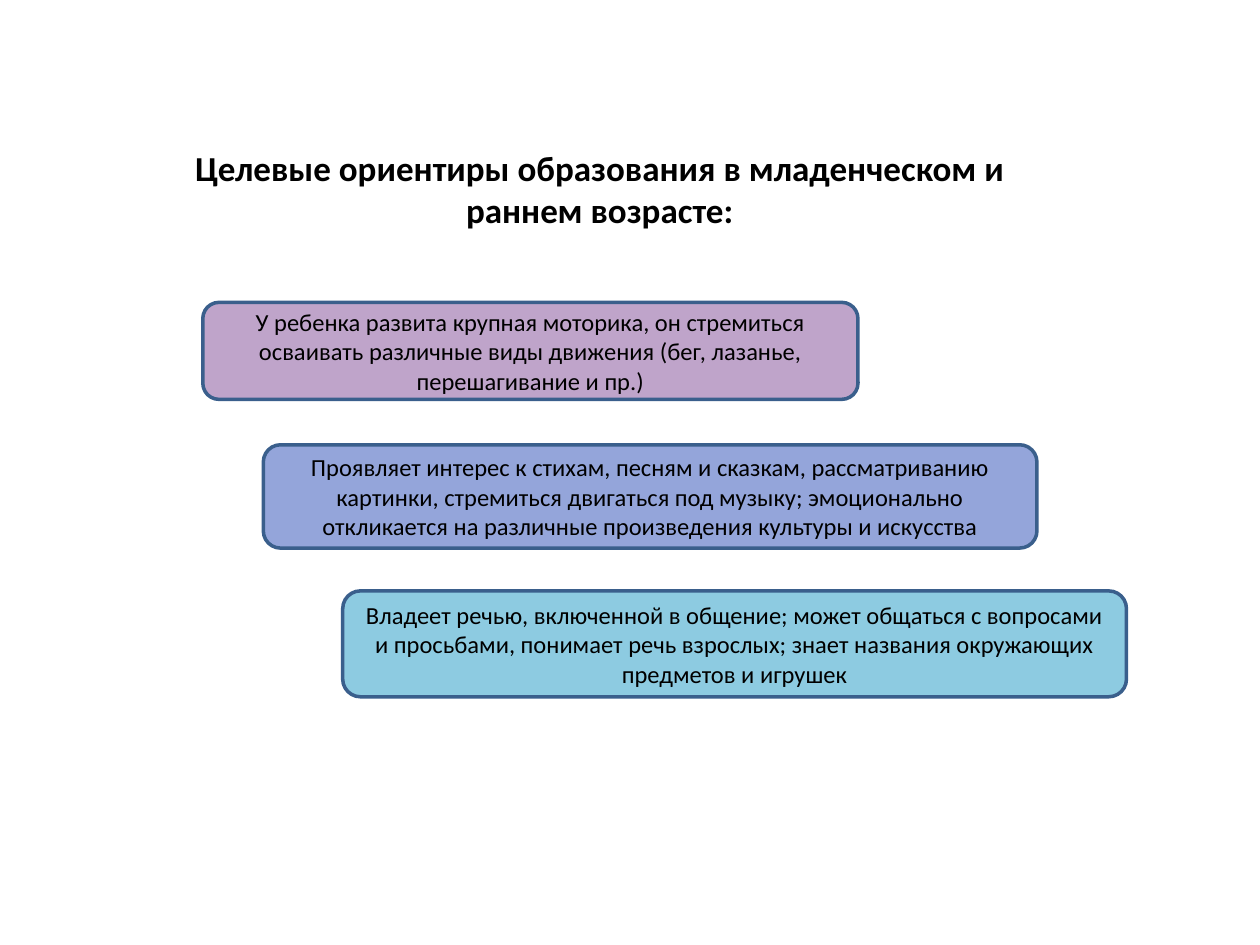
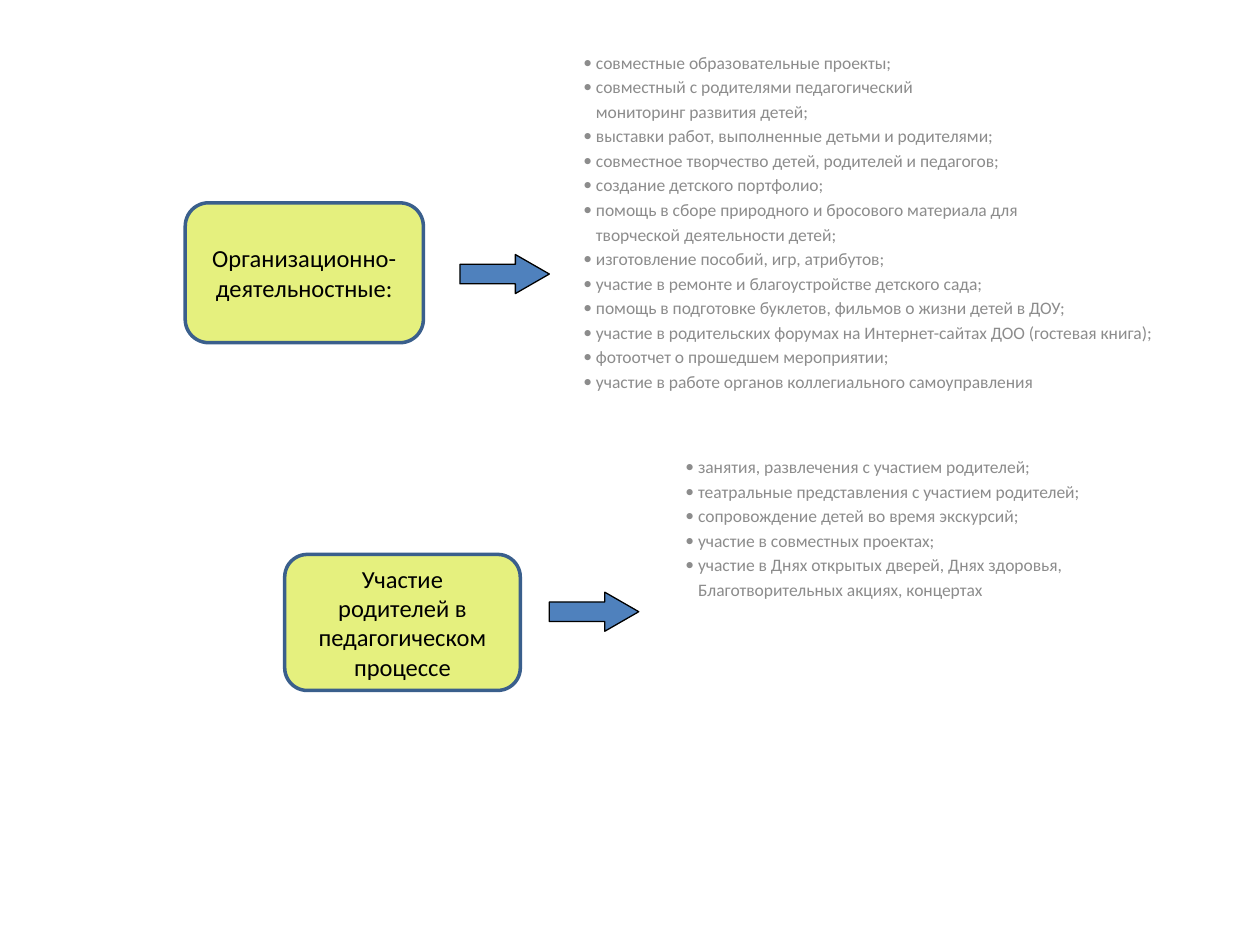
from lxml import etree
from pptx import Presentation
from pptx.dml.color import RGBColor
from pptx.enum.shapes import MSO_SHAPE
from pptx.enum.text import MSO_ANCHOR, MSO_AUTO_SIZE, PP_ALIGN
from pptx.oxml.ns import qn
from pptx.util import Inches, Pt

ROUNDED, ARROW = MSO_SHAPE.ROUNDED_RECTANGLE, MSO_SHAPE.RIGHT_ARROW
TOP, MIDDLE, BOTTOM = MSO_ANCHOR.TOP, MSO_ANCHOR.MIDDLE, MSO_ANCHOR.BOTTOM
LEFT, CENTER = PP_ALIGN.LEFT, PP_ALIGN.CENTER

FONT = "Calibri"
BLACK = RGBColor(0x00, 0x00, 0x00)
GRAY = RGBColor(0x8C, 0x8C, 0x8C)
OUTLINE = RGBColor(0x3A, 0x5F, 0x8C)
ARROW_BLUE = RGBColor(0x4F, 0x81, 0xBD)
LILAC = RGBColor(0xBF, 0xA4, 0xCA)
PERIWINKLE = RGBColor(0x94, 0xA5, 0xDA)
AQUA = RGBColor(0x8D, 0xCB, 0xE1)
LIME = RGBColor(0xE5, 0xF0, 0x7E)

TITLE_ONLY, TWO_CONTENT = 5, 3
BULLET_INDENT = Inches(0.1)

HEADING = "Целевые ориентиры образования в младенческом и раннем возрасте:"
# Text, box and fill of each step
GOALS = [
    ("У ребенка развита крупная моторика, он стремиться осваивать различные "
     "виды движения (бег, лазанье, перешагивание и пр.)",
     (1.61, 2.4, 5.2, 0.77), LILAC),
    ("Проявляет интерес к стихам, песням и сказкам, рассматриванию картинки, "
     "стремиться двигаться под музыку; эмоционально откликается на различные "
     "произведения культуры и искусства",
     (2.09, 3.53, 6.14, 0.82), PERIWINKLE),
    ("Владеет речью, включенной в общение; может общаться с вопросами и "
     "просьбами, понимает речь взрослых; знает названия окружающих предметов "
     "и игрушек",
     (2.72, 4.69, 6.22, 0.84), AQUA),
]

# A line break inside an item starts its indented continuation line
ORGANIZATION_ITEMS = [
    "совместные образовательные проекты;",
    "совместный с родителями педагогический\nмониторинг развития детей;",
    "выставки работ, выполненные детьми и родителями;",
    "совместное творчество детей, родителей и педагогов;",
    "создание детского портфолио;",
    "помощь в сборе природного и бросового материала для\n"
    "творческой деятельности детей;",
    "изготовление пособий, игр, атрибутов;",
    "участие в ремонте и благоустройстве детского сада;",
    "помощь в подготовке буклетов, фильмов о жизни детей в ДОУ;",
    "участие в родительских форумах на Интернет-сайтах ДОО (гостевая книга);",
    "фотоотчет о прошедшем мероприятии;",
    "участие в работе органов коллегиального самоуправления",
]
PARTICIPATION_ITEMS = [
    "занятия, развлечения с участием родителей;",
    "театральные представления с участием родителей;",
    "сопровождение детей во время экскурсий;",
    "участие в совместных проектах;",
    "участие в Днях открытых дверей, Днях здоровья,\n"
    "Благотворительных акциях, концертах",
]


def place(shape, box):
    shape.left, shape.top, shape.width, shape.height = map(Inches, box)


def set_bullet(paragraph, bulleted):
    properties = paragraph._p.get_or_add_pPr()
    properties.set("marL", str(BULLET_INDENT))
    properties.set("indent", str(-BULLET_INDENT if bulleted else 0))
    if bulleted:
        etree.SubElement(properties, qn("a:buFont")).set("typeface", FONT)
        etree.SubElement(properties, qn("a:buChar")).set("char", "•")
    else:
        etree.SubElement(properties, qn("a:buNone"))


def write_text(shape, text, size=14, color=BLACK, bold=False, align=CENTER,
               anchor=MIDDLE):
    """Fill a shape with one paragraph per line and return the paragraphs."""
    frame = shape.text_frame
    frame.text = text
    frame.word_wrap = True
    frame.auto_size = MSO_AUTO_SIZE.NONE
    frame.vertical_anchor = anchor
    for paragraph in frame.paragraphs:
        paragraph.alignment = align
        paragraph.space_before = Pt(0)
        for run in paragraph.runs:
            run.font.name = FONT
            run.font.size = Pt(size)
            run.font.bold = bold
            run.font.color.rgb = color
    return frame.paragraphs


def add_figure(slide, kind, box, fill, line, line_width):
    shape = slide.shapes.add_shape(kind, *map(Inches, box))
    shape.shadow.inherit = False
    shape.fill.solid()
    shape.fill.fore_color.rgb = fill
    shape.line.color.rgb = line
    shape.line.width = Pt(line_width)
    return shape


def add_card(slide, text, box, fill):
    write_text(add_figure(slide, ROUNDED, box, fill, OUTLINE, 2), text)


def add_arrow(slide, left, top):
    arrow = add_figure(slide, ARROW, (left, top, 0.71, 0.31), ARROW_BLUE, BLACK, 0.75)
    arrow.adjustments[1] = 0.87


def fill_list(placeholder, items, box):
    place(placeholder, box)
    lines = [(line, index == 0) for item in items
             for index, line in enumerate(item.split("\n"))]
    paragraphs = write_text(placeholder, "\n".join(line for line, _ in lines),
                            size=10, color=GRAY, align=LEFT, anchor=TOP)
    for number, (paragraph, (_, bulleted)) in enumerate(zip(paragraphs, lines)):
        paragraph.space_before = Pt(2 if number else 0)
        set_bullet(paragraph, bulleted)


def add_group(slide, card_text, card_box, arrow_at, placeholder, items, list_box):
    """Place a card, the arrow leading from it and its list."""
    add_card(slide, card_text, card_box, LIME)
    add_arrow(slide, *arrow_at)
    fill_list(placeholder, items, list_box)


def build_goals_slide(presentation):
    slide = presentation.slides.add_slide(presentation.slide_layouts[TITLE_ONLY])
    title = slide.shapes.title
    place(title, (1.14, 1.17, 7.24, 0.71))
    write_text(title, HEADING, size=20, bold=True, anchor=BOTTOM)
    for text, box, fill in GOALS:
        add_card(slide, text, box, fill)


def build_family_slide(presentation):
    slide = presentation.slides.add_slide(presentation.slide_layouts[TWO_CONTENT])
    title, upper_list, lower_list = slide.placeholders
    title.element.getparent().remove(title.element)
    # Organization and activities
    add_group(slide, "Организационно-деятельностные:", (1.47, 1.61, 1.89, 1.11),
              (3.65, 2.02), upper_list, ORGANIZATION_ITEMS, (4.53, 0.36, 4.93, 2.83))
    # Parents in the teaching process
    add_group(slide, "Участие родителей в педагогическом процессе",
              (2.26, 4.4, 1.87, 1.08), (4.36, 4.7), lower_list,
              PARTICIPATION_ITEMS, (5.34, 3.57, 4.02, 1.25))


def main():
    presentation = Presentation()
    presentation.slide_width = Inches(10)
    presentation.slide_height = Inches(7.5)
    build_goals_slide(presentation)
    build_family_slide(presentation)
    presentation.save("out.pptx")


if __name__ == "__main__":
    main()
